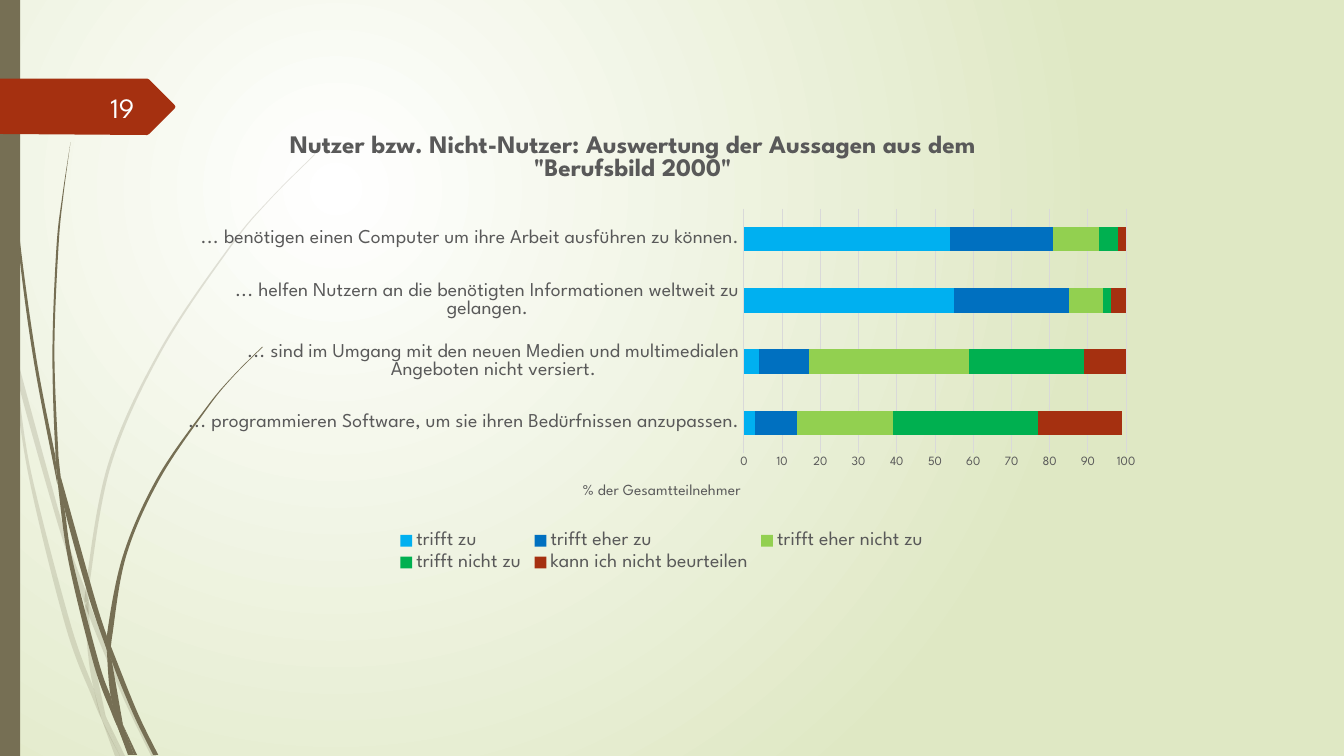
"""Build a survey slide: stacked bar chart over a soft green background with grass blades."""
from dataclasses import dataclass

from lxml import etree
from pptx import Presentation
from pptx.chart.data import CategoryChartData
from pptx.dml.color import RGBColor
from pptx.enum.chart import XL_CHART_TYPE as Chart, XL_LEGEND_POSITION as Legend, XL_TICK_MARK as Tick
from pptx.enum.shapes import MSO_SHAPE as Shape
from pptx.enum.text import MSO_ANCHOR as Anchor, PP_ALIGN as Align
from pptx.oxml import parse_xml
from pptx.oxml.ns import nsdecls, qn
from pptx.util import Inches, Pt


@dataclass(frozen=True)
class Theme:
    font: str = "League Spartan"
    olive: str = "766F54"
    rust: str = "A53010"
    text: str = "595959"
    grid: str = "D9D9D9"
    number: str = "FEFFFF"
    inner: str = "FFFFFF"
    outer: str = "DFE8C4"
    title_pt: int = 18
    label_pt: int = 14
    axis_title_pt: int = 11
    tick_pt: int = 9
    number_pt: int = 20


T = Theme()
W, H = 13.33, 7.5
PAGE = "19"
TITLE = 'Nutzer bzw. Nicht-Nutzer: Auswertung der Aussagen aus dem "Berufsbild 2000"'
AXIS_TITLE = "% der Gesamtteilnehmer"
STATEMENTS = [
    "... programmieren Software, um sie ihren Bedürfnissen anzupassen.",
    "... sind im Umgang mit den neuen Medien und multimedialen Angeboten nicht versiert.",
    "... helfen Nutzern an die benötigten Informationen weltweit zu gelangen.",
    "... benötigen einen Computer um ihre Arbeit ausführen zu können.",
]
ANSWERS = [
    ("trifft zu", (3, 4, 55, 54), "00B0F0"),
    ("trifft eher zu", (11, 13, 30, 27), "0070C0"),
    ("trifft eher nicht zu", (25, 42, 9, 12), "92D050"),
    ("trifft nicht zu", (38, 30, 2, 5), "00B050"),
    ("kann ich nicht beurteilen", (22, 12, 4, 2), T.rust),
]
CHART_BOX = (1.67, 1.23, 9.79, 4.48)
PLOT_BOX = (7.38, 2.07, 3.79, 2.43)
TITLE_AT = (2.83, 1.27)
AXIS_TITLE_AT = (5.75, 4.76)

# Each blade is a left edge going down and a right edge going up.
PALE_BLADES = [
    ([(0, 2.82), (0, 2.99), (0.1, 3.44), (0.11, 3.5)], [(0.09, 3.22), (0, 2.82)]),
    ([(0.14, 3.45), (0.17, 3.76), (0.58, 5.22), (0.84, 5.99)], [(0.85, 5.86), (0.62, 5.2), (0.14, 3.45)]),
    ([(0.88, 5.96), (0.88, 6.1), (1.23, 6.94), (1.5, 7.5)], [(1.55, 7.5), (1.27, 6.92), (0.92, 6.07), (0.88, 5.96)]),
    ([(1.05, 7.11), (1.19, 7.5)], [(1.24, 7.5), (1.05, 7.11)]),
    ([(0.11, 3.5), (0.28, 4.7), (0.65, 6.21), (0.92, 6.93), (1.01, 7.14)],
     [(0.93, 6.83), (0.7, 6.19), (0.31, 4.69), (0.17, 3.76), (0.11, 3.5)]),
    ([(0.84, 5.99), (0.87, 6.46), (0.93, 6.83), (1.05, 7.11)], [(0.91, 6.46), (0.88, 6.08), (0.84, 5.99)]),
    ([(3.12, 1.53), (2.68, 1.97), (2.28, 2.44), (1.58, 3.48), (1.07, 4.61), (0.85, 5.84), (0.88, 5.96)],
     [(0.88, 5.84), (1.1, 4.62), (1.6, 3.49), (2.29, 2.45), (2.68, 1.98), (3.12, 1.54)]),
    ([(1.01, 7.14), (1.14, 7.5)], [(1.19, 7.5), (1.01, 7.14)]),
    ([(0.85, 5.86), (0.84, 5.99), (0.88, 6.1)], [(0.88, 5.96), (0.85, 5.86)]),
    ([(0.93, 6.83), (1.01, 7.14), (1.19, 7.5)], [(1.05, 7.11), (0.96, 6.92), (0.93, 6.83)]),
]
DARK_BLADES = [
    ([(0.03, 0), (0.07, 1.1), (0.17, 2.33), (0.33, 3.55), (0.57, 4.81)],
     [(0.55, 4.53), (0.36, 3.55), (0.19, 2.32), (0.08, 1.09), (0.04, 0)]),
    ([(0.6, 4.72), (0.64, 5.05), (0.88, 5.92), (1.06, 6.45)], [(1.06, 6.31), (0.93, 5.9), (0.6, 4.72)]),
    ([(1.1, 6.41), (1.11, 6.56), (1.32, 7.08), (1.52, 7.49)], [(1.57, 7.49), (1.36, 7.06), (1.1, 6.41)]),
    ([(0.57, 4.77), (0.68, 5.57), (0.93, 6.59), (1.11, 7.08), (1.17, 7.22)],
     [(1.1, 6.91), (0.98, 6.57), (0.72, 5.56), (0.64, 5.05), (0.57, 4.77)]),
    ([(0.7, 1.41), (0.62, 1.93), (0.56, 2.45), (0.52, 3.49), (0.55, 4.49), (0.6, 4.72)],
     [(0.58, 4.53), (0.54, 3.49), (0.58, 2.45), (0.63, 1.93), (0.7, 1.41)]),
    ([(1.22, 7.19), (1.33, 7.49)], [(1.36, 7.49), (1.22, 7.19)]),
    ([(0.55, 4.49), (0.57, 4.77), (0.64, 5.05)], [(0.6, 4.72), (0.55, 4.49)]),
    ([(2.6, 3.44), (2.31, 3.73), (2.04, 4.05), (1.56, 4.74), (1.22, 5.51), (1.06, 6.31), (1.1, 6.41)],
     [(1.11, 6.33), (1.25, 5.52), (1.58, 4.76), (2.05, 4.06), (2.31, 3.74), (2.61, 3.44)]),
    ([(1.17, 7.22), (1.27, 7.49)], [(1.31, 7.49), (1.17, 7.22)]),
    ([(1.06, 6.45), (1.1, 6.91), (1.22, 7.19)], [(1.11, 6.56), (1.06, 6.45)]),
    ([(1.06, 6.31), (1.06, 6.45), (1.11, 6.56)], [(1.1, 6.41), (1.06, 6.31)]),
    ([(1.1, 6.91), (1.17, 7.22), (1.3, 7.49)], [(1.33, 7.49), (1.22, 7.19), (1.1, 6.91)]),
]
BADGE = [(0, 0.78), (1.46, 0.78), (1.48, 0.79), (1.73, 1.04), (1.74, 1.06),
         (1.73, 1.08), (1.48, 1.33), (1.46, 1.34), (0, 1.33)]


def rgb(color):
    return RGBColor.from_string(color)


def style(font, size, color=T.text, bold=False):
    font.name, font.size, font.bold = T.font, Pt(size), bold
    font.color.rgb = rgb(color)


def paint(sp, color, alpha=None):
    sp.shadow.inherit = False
    sp.fill.solid()
    sp.fill.fore_color.rgb = rgb(color)
    sp.line.fill.background()
    if alpha:
        clr = sp.fill._xPr.find(".//" + qn("a:srgbClr"))
        etree.SubElement(clr, qn("a:alpha")).set("val", str(alpha * 1000))


def outline(s, points, color, alpha=None):
    emu = [(Inches(x), Inches(y)) for x, y in points]
    fb = s.shapes.build_freeform(*emu[0], scale=1)
    fb.add_line_segments(emu[1:], close=True)
    sp = fb.convert_to_shape()
    paint(sp, color, alpha)
    return sp


def bezier(edge):
    padded = [edge[0], *edge, edge[-1]]
    points = []
    for a, b, c, d in zip(padded, padded[1:], padded[2:], padded[3:]):
        points += [tuple(q + (r - p) / 6 for p, q, r in zip(a, b, c)),
                   tuple(r - (u - q) / 6 for q, r, u in zip(b, c, d)), c]
    return points


def blade(s, left, right, alpha=None):
    bridge = [left[-1], right[0], right[0]]
    sp = outline(s, [left[0], *bezier(left), *bridge, *bezier(right)], T.olive, alpha)
    lines = list(sp._element.iter(qn("a:lnTo")))
    for first, second, third in zip(*[iter(lines)] * 3):
        first.tag = qn("a:cubicBezTo")
        for line in (second, third):
            first.append(line[0])
            line.getparent().remove(line)


def background(s):
    stops = "".join(f'<a:gs pos="{pos}"><a:srgbClr val="{color}"/></a:gs>'
                    for pos, color in ((0, T.inner), (100000, T.outer)))
    s.background.fill.solid()
    bg = s._element.cSld.find(qn("p:bg")).find(qn("p:bgPr"))
    bg.replace(bg[0], parse_xml(
        f'<a:gradFill {nsdecls("a")} rotWithShape="1"><a:gsLst>{stops}</a:gsLst><a:path path="circle">'
        '<a:fillToRect l="50000" t="50000" r="100000" b="100000"/></a:path></a:gradFill>'))


def place(parent, index, box, target=""):
    for old in parent.findall(qn("c:layout")):
        parent.remove(old)
    left, top, width, height = CHART_BOX
    shares = zip("xywh", box, (left, top, 0, 0), (width, height) * 2)
    values = "".join(f'<c:{k} val="{(v - start) / size:.4f}"/>' for k, v, start, size in shares)
    parent.insert(index, parse_xml(
        f'<c:layout {nsdecls("c")}><c:manualLayout>{target}<c:xMode val="edge"/><c:yMode val="edge"/>'
        f'{values}</c:manualLayout></c:layout>'))


def caption(title, text, size, bold, at):
    p = title.text_frame.paragraphs[0]
    p.text = text
    style(p.runs[0].font, size, bold=bold)
    place(title._element, 1, at)


def survey_chart(s):
    data = CategoryChartData(number_format="0")
    data.categories = STATEMENTS
    for name, values, _ in ANSWERS:
        data.add_series(name, values)
    chart = s.shapes.add_chart(Chart.BAR_STACKED, *map(Inches, CHART_BOX), data).chart
    chart.font.name, chart.font.size = T.font, Pt(10)
    caption(chart.chart_title, TITLE, T.title_pt, True, TITLE_AT)
    plot = chart.plots[0]
    plot.gap_width, plot.overlap, plot.vary_by_categories = 150, 100, False
    for series, (_, _, color) in zip(plot.series, ANSWERS):
        series.format.fill.solid()
        series.format.fill.fore_color.rgb = rgb(color)
    cat, val = chart.category_axis, chart.value_axis
    for axis, size in ((cat, T.label_pt), (val, T.tick_pt)):
        axis.major_tick_mark = axis.minor_tick_mark = Tick.NONE
        style(axis.tick_labels.font, size)
    val.minimum_scale, val.maximum_scale, val.major_unit = 0, 100, 10
    val.format.line.fill.background()
    for line in (cat.format.line, val.major_gridlines.format.line):
        line.color.rgb, line.width = rgb(T.grid), Pt(0.75)
    caption(val.axis_title, AXIS_TITLE, T.axis_title_pt, False, AXIS_TITLE_AT)
    chart.has_legend = True
    chart.legend.position, chart.legend.include_in_layout = Legend.BOTTOM, False
    style(chart.legend.font, T.label_pt)
    place(chart._chartSpace.chart.plotArea, 0, PLOT_BOX, '<c:layoutTarget val="inner"/>')


prs = Presentation()
prs.slide_width, prs.slide_height = Inches(W), Inches(H)
s = prs.slides.add_slide(prs.slide_layouts[6])
background(s)
for blades, alpha in ((PALE_BLADES, 20), (DARK_BLADES, None)):
    for left, right in blades:
        blade(s, left, right, alpha)
paint(s.shapes.add_shape(Shape.RECTANGLE, 0, 0, Inches(0.2), Inches(H)), T.olive)
outline(s, BADGE, T.rust)
survey_chart(s)
tf = s.shapes.add_textbox(*map(Inches, (0.58, 0.86, 0.85, 0.4))).text_frame
tf.word_wrap, tf.vertical_anchor = True, Anchor.MIDDLE
p = tf.paragraphs[0]
p.text, p.alignment = PAGE, Align.RIGHT
style(p.runs[0].font, T.number_pt, T.number)
prs.save("out.pptx")
